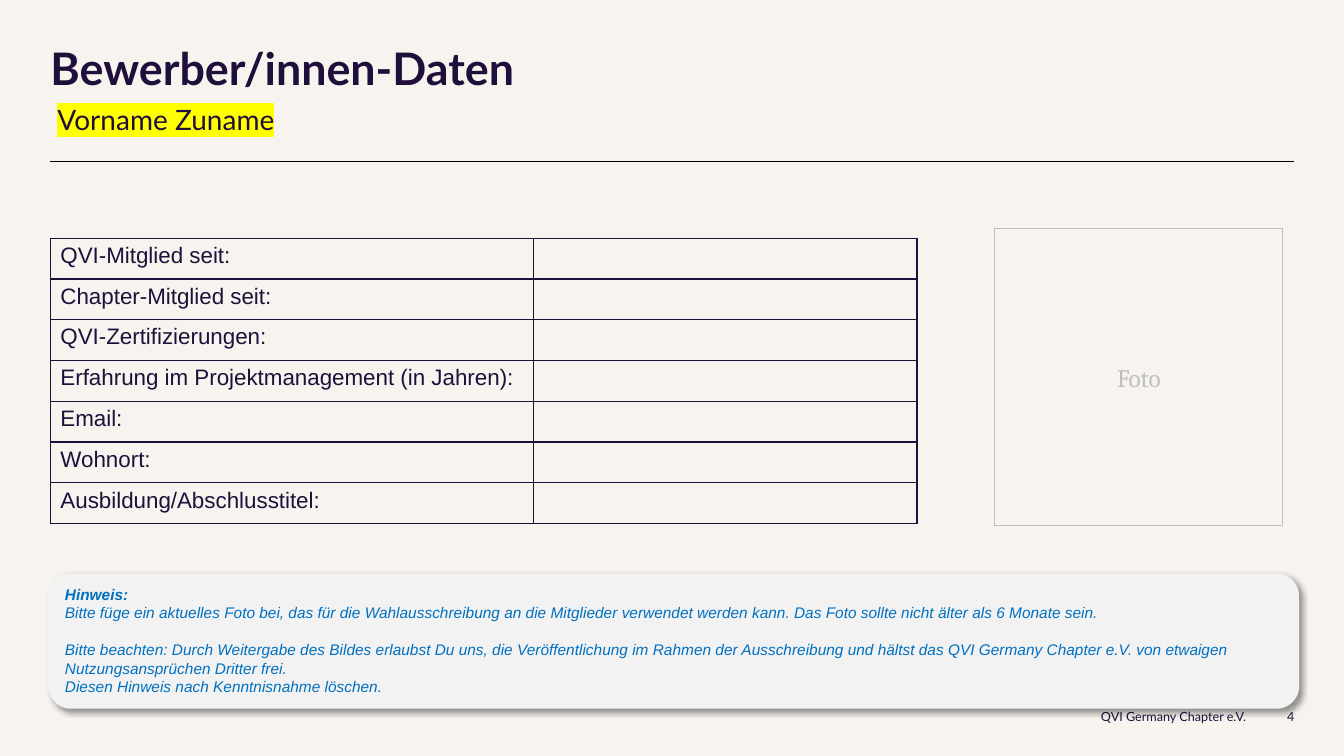
from lxml.etree import SubElement as Sub
from pptx import Presentation
from pptx.dml.color import RGBColor as RGB
from pptx.enum.shapes import MSO_CONNECTOR as Conn, MSO_SHAPE as Form
from pptx.enum.text import MSO_ANCHOR as Anchor, PP_ALIGN as Align
from pptx.oxml import parse_xml
from pptx.oxml.ns import nsdecls, qn
from pptx.util import Cm, Pt

CREAM = RGB(0xF7, 0xF4, 0xEF)
INK = RGB(0x20, 0x0F, 0x3B)
BLACK = RGB(0, 0, 0)
GREY = RGB(0xBF, 0xBF, 0xBF)
PALE = RGB(0xF2, 0xF2, 0xF2)
BLUE = RGB(0x00, 0x70, 0xC0)
YELLOW = RGB(0xFF, 0xFF, 0x00)

LABELS = [
    "QVI-Mitglied seit:",
    "Chapter-Mitglied seit:",
    "QVI-Zertifizierungen:",
    "Erfahrung im Projektmanagement (in Jahren):",
    "Email:",
    "Wohnort:",
    "Ausbildung/Abschlusstitel:",
]
# Each note paragraph: text, bold, space after in points
NOTES = [
    ("Hinweis:", True, 0),
    ("Bitte füge ein aktuelles Foto bei, das für die Wahlausschreibung an die "
     "Mitglieder verwendet werden kann. Das Foto sollte nicht älter als "
     "6 Monate sein.", False, 13),
    ("Bitte beachten: Durch Weitergabe des Bildes erlaubst Du uns, die "
     "Veröffentlichung im Rahmen der Ausschreibung und hältst das QVI Germany "
     "Chapter e.V. von etwaigen Nutzungsansprüchen Dritter frei.", False, 0),
    ("Diesen Hinweis nach Kenntnisnahme löschen.", False, 0),
]


def add_run(para, text, face, size, color, bold=False, italic=False):
    run = para.add_run()
    run.text = text
    font = run.font
    font.name, font.size, font.bold, font.italic = face, Pt(size), bold, italic
    font.color.rgb = color
    return run


def bare(frame, anchor=Anchor.TOP):
    """Wrap the text frame and drop its margins; return its first paragraph."""
    frame.word_wrap = True
    frame.vertical_anchor = anchor
    frame.margin_left = frame.margin_right = 0
    frame.margin_top = frame.margin_bottom = 0
    return frame.paragraphs[0]


def add_head(slide, x, y, w, h):
    title = slide.shapes.title
    title.left, title.top, title.width, title.height = x, y, w, Cm(1.22)
    para = bare(title.text_frame)
    para.alignment = Align.LEFT
    para.line_spacing = 0.9
    add_run(para, "Bewerber/innen-Daten", "Lato", 32, INK, bold=True)

    inset = Cm(0.18)
    sub = slide.shapes.add_textbox(x + inset, y + Cm(1.4), w - inset, Cm(0.86))
    run = add_run(bare(sub.text_frame), "Vorname Zuname", "Lato", 20, INK)
    mark = parse_xml(f'<a:highlight {nsdecls("a")}><a:srgbClr val="{YELLOW}"/>'
                     '</a:highlight>')
    run.font._element.find(qn("a:solidFill")).addnext(mark)

    rule = slide.shapes.add_connector(Conn.STRAIGHT, x, y + h, x + w, y + h)
    rule.line.color.rgb = BLACK
    rule.line.width = Pt(0.5)
    Sub(rule._element.spPr, qn("a:effectLst"))


def frame_cell(cell):
    """Leave the cell unfilled and draw all four borders."""
    cell.fill.background()
    props = cell._tc.get_or_add_tcPr()
    for spot, side in enumerate("LRTB"):
        props.insert(spot, parse_xml(
            f'<a:ln{side} {nsdecls("a")} w="{Pt(1)}"><a:solidFill>'
            f'<a:srgbClr val="{INK}"/></a:solidFill></a:ln{side}>'))


def add_data(slide, x, y, w, h):
    count = len(LABELS)
    table = slide.shapes.add_table(count, 2, x, y, w, h).table
    table.first_row = table.horz_banding = False
    first = Cm(12.17)
    table.columns[0].width = first
    table.columns[1].width = w - first
    for row, label in zip(table.rows, LABELS):
        row.height = h // count
        for cell in row.cells:
            frame_cell(cell)
        para = row.cells[0].text_frame.paragraphs[0]
        add_run(para, label, "Arial", 16, INK)


def add_photo(slide, x, y, w, h):
    box = slide.shapes.add_shape(Form.RECTANGLE, x, y, w, h)
    box.shadow.inherit = False
    box.fill.background()
    box.line.color.rgb = GREY
    box.line.width = Pt(0.75)
    box.text_frame.vertical_anchor = Anchor.MIDDLE
    para = box.text_frame.paragraphs[0]
    para.alignment = Align.CENTER
    add_run(para, "Foto", "Cambria", 18, GREY)


def add_note(slide, x, y, w, h):
    box = slide.shapes.add_shape(Form.ROUNDED_RECTANGLE, x, y, w, h)
    box.fill.solid()
    box.fill.fore_color.rgb = PALE
    box.line.fill.background()
    box.shadow.inherit = False
    box._element.spPr.find(qn("a:effectLst")).append(parse_xml(
        f'<a:outerShdw {nsdecls("a")} blurRad="{Pt(4)}" dist="{Pt(3)}" '
        'dir="2700000" algn="tl" rotWithShape="0"><a:srgbClr val="000000">'
        '<a:alpha val="40000"/></a:srgbClr></a:outerShdw>'))
    frame = box.text_frame
    frame.word_wrap = True
    frame.vertical_anchor = Anchor.TOP
    for spot, (text, bold, gap) in enumerate(NOTES):
        para = frame.add_paragraph() if spot else frame.paragraphs[0]
        para.alignment = Align.LEFT
        para.space_after = Pt(gap)
        add_run(para, text, "Arial", 11, BLUE, bold, italic=True)


def add_foot(slide, x, y, w, h):
    page = Cm(1.22)
    parts = [("QVI Germany Chapter e.V.", x, w - page),
             ("4", x + w - page, page)]
    for text, left, width in parts:
        box = slide.shapes.add_textbox(left, y, width, h)
        para = bare(box.text_frame, Anchor.MIDDLE)
        para.alignment = Align.RIGHT
        add_run(para, text, "Lato", 9, INK)


def main():
    deck = Presentation()
    deck.slide_width, deck.slide_height = Cm(33.87), Cm(19.05)
    slide = deck.slides.add_slide(deck.slide_layouts[5])
    slide.background.fill.solid()
    slide.background.fill.fore_color.rgb = CREAM

    left = Cm(1.27)
    add_foot(slide, Cm(23.83), Cm(17.04), Cm(8.79), Cm(2.01))
    add_head(slide, left, Cm(1.19), Cm(31.33), Cm(2.87))
    add_data(slide, left, Cm(6), Cm(21.84), Cm(7.2))
    add_photo(slide, Cm(25.07), Cm(5.75), Cm(7.26), Cm(7.5))
    add_note(slide, Cm(1.22), Cm(14.45), Cm(31.52), Cm(3.41))
    deck.save("out.pptx")


if __name__ == "__main__":
    main()
